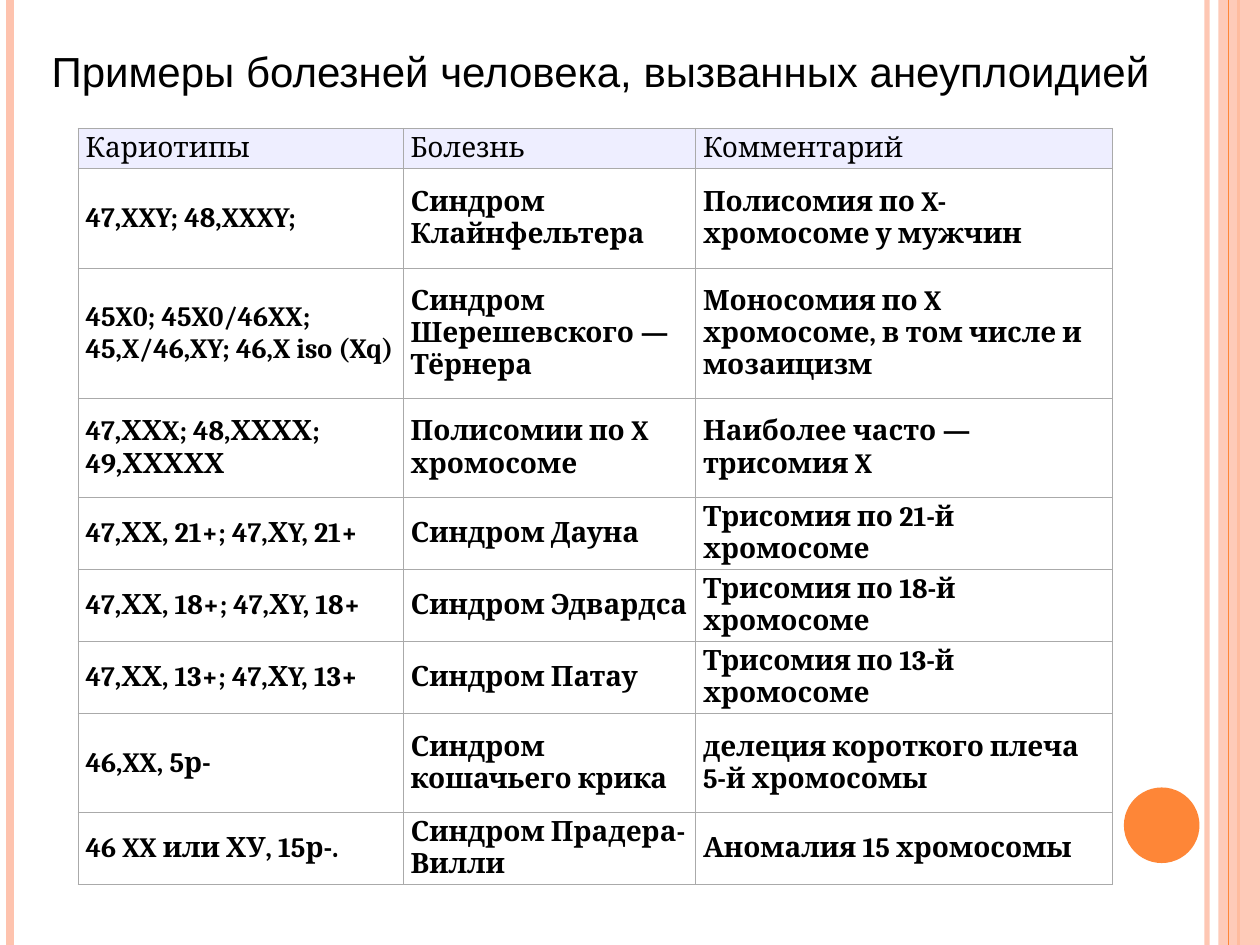
"""Build a slide with a table of human diseases caused by aneuploidy."""
from dataclasses import dataclass

from lxml.etree import SubElement
from pptx import Presentation
from pptx.dml.color import RGBColor
from pptx.enum.shapes import MSO_CONNECTOR, MSO_SHAPE
from pptx.enum.text import MSO_ANCHOR, PP_ALIGN
from pptx.oxml.ns import qn
from pptx.util import Inches, Pt

COLORS = {
    "peach": "FEC3AE",
    "orange": "FE8637",
    "header": "EEEEFF",
    "border": "AAAAAA",
    "text": "000000",
}
TITLE = "Примеры болезней человека, вызванных анеуплоидией"
HEADER = ("Кариотипы", "Болезнь", "Комментарий")
COL_WIDTHS = (2.58, 2.32, 3.31)
HEADER_HEIGHT = 0.32


@dataclass
class Stripe:
    x: float
    color: str
    width: float
    opacity: int = 100


@dataclass
class Block:
    shape: MSO_SHAPE
    x: float
    y: float
    w: float
    h: float
    color: str
    opacity: int = 100


@dataclass
class Disease:
    karyotypes: str
    name: str
    comment: str
    height: float = 0.55

    def texts(self) -> tuple:
        return self.karyotypes, self.name, self.comment


DECOR = (
    Stripe(9.58, "peach", 3, 93),
    Stripe(0.08, "peach", 4.5),
    Stripe(9.83, "orange", 1.5),
    Block(MSO_SHAPE.RECTANGLE, 9.67, 0, 0.33, 7.5, "peach", 87),
    Stripe(9.75, "orange", 0.75),
    Block(MSO_SHAPE.OVAL, 8.92, 6.25, 0.6, 0.6, "orange"),
)
DISEASES = (
    Disease("47,XXY; 48,XXXY;", "Синдром Клайнфельтера",
            "Полисомия по X-хромосоме у мужчин", 0.79),
    Disease("45X0; 45X0/46XX; 45,X/46,XY; 46,X iso (Xq)",
            "Синдром Шерешевского — Тёрнера",
            "Моносомия по X хромосоме, в том числе и мозаицизм", 1.03),
    Disease("47,ХХX; 48,ХХХХ; 49,ХХХХХ", "Полисомии по X хромосоме",
            "Наиболее часто — трисомия X", 0.79),
    Disease("47,ХХ, 21+; 47,ХY, 21+", "Синдром Дауна",
            "Трисомия по 21-й хромосоме"),
    Disease("47,ХХ, 18+; 47,ХY, 18+", "Синдром Эдвардса",
            "Трисомия по 18-й хромосоме"),
    Disease("47,ХХ, 13+; 47,ХY, 13+", "Синдром Патау",
            "Трисомия по 13-й хромосоме"),
    Disease("46,XX, 5р-", "Синдром кошачьего крика",
            "делеция короткого плеча 5-й хромосомы", 0.79),
    Disease("46 XX или ХУ, 15р-.", "Синдром Прадера-Вилли",
            "Аномалия 15 хромосомы"),
)


def rgb(name: str) -> RGBColor:
    return RGBColor.from_string(COLORS[name])


def set_opacity(sp, percent: int) -> None:
    if percent < 100:
        clr = sp._element.spPr.find(".//" + qn("a:srgbClr"))
        SubElement(clr, qn("a:alpha"), val=str(percent * 1000))


def draw_stripe(slide, stripe: Stripe) -> None:
    x = Inches(stripe.x)
    line = slide.shapes.add_connector(MSO_CONNECTOR.STRAIGHT, x, 0, x, Inches(7.5))
    line.line.color.rgb = rgb(stripe.color)
    line.line.width = Pt(stripe.width)
    set_opacity(line, stripe.opacity)
    SubElement(line._element.spPr, qn("a:effectLst"))


def draw_block(slide, block: Block) -> None:
    sp = slide.shapes.add_shape(block.shape, Inches(block.x), Inches(block.y),
                                Inches(block.w), Inches(block.h))
    sp.shadow.inherit = False
    sp.fill.solid()
    sp.fill.fore_color.rgb = rgb(block.color)
    sp.line.fill.background()
    set_opacity(sp, block.opacity)


def add_text(tf, text: str, font: str, size: float, bold: bool = False) -> None:
    p = tf.paragraphs[0]
    p.alignment = PP_ALIGN.LEFT
    r = p.add_run()
    r.text = text
    r.font.name = font
    r.font.size = Pt(size)
    r.font.bold = bold
    r.font.color.rgb = rgb("text")


def draw_title(slide) -> None:
    sp = slide.shapes.title
    sp.left, sp.top = Inches(0.31), Inches(0.31)
    sp.width, sp.height = Inches(9.06), Inches(0.5)
    tf = sp.text_frame
    tf.word_wrap = True
    tf.vertical_anchor = MSO_ANCHOR.MIDDLE
    add_text(tf, TITLE, "Arial", 24)


def set_borders(cell) -> None:
    tc_pr = cell._tc.get_or_add_tcPr()
    for side in ("lnL", "lnR", "lnT", "lnB"):
        ln = SubElement(tc_pr, qn(f"a:{side}"), w=str(Pt(0.75)))
        fill = SubElement(ln, qn("a:solidFill"))
        SubElement(fill, qn("a:srgbClr"), val=COLORS["border"])


def fill_cell(cell, text: str, is_header: bool) -> None:
    cell.margin_left = cell.margin_right = Inches(0.06)
    cell.margin_top = cell.margin_bottom = Inches(0.03)
    cell.vertical_anchor = MSO_ANCHOR.MIDDLE
    set_borders(cell)
    if is_header:
        cell.fill.solid()
        cell.fill.fore_color.rgb = rgb("header")
    else:
        cell.fill.background()
    add_text(cell.text_frame, text, "Cambria", 16, bold=not is_header)


def draw_table(slide) -> None:
    rows = (HEADER, *(d.texts() for d in DISEASES))
    heights = (HEADER_HEIGHT, *(d.height for d in DISEASES))
    table = slide.shapes.add_table(
        len(rows), len(HEADER), Inches(0.62), Inches(1.02),
        Inches(sum(COL_WIDTHS)), Inches(sum(heights))).table
    table.first_row = table.horz_banding = False
    for col, width in zip(table.columns, COL_WIDTHS):
        col.width = Inches(width)
    for i, (texts, height) in enumerate(zip(rows, heights)):
        table.rows[i].height = Inches(height)
        for j, text in enumerate(texts):
            fill_cell(table.cell(i, j), text, is_header=i == 0)


def main() -> None:
    prs = Presentation()
    prs.slide_width, prs.slide_height = Inches(10), Inches(7.5)
    s = prs.slides.add_slide(prs.slide_layouts[5])
    for item in DECOR:
        if isinstance(item, Stripe):
            draw_stripe(s, item)
        else:
            draw_block(s, item)
    draw_table(s)
    draw_title(s)
    prs.save("out.pptx")


if __name__ == "__main__":
    main()
